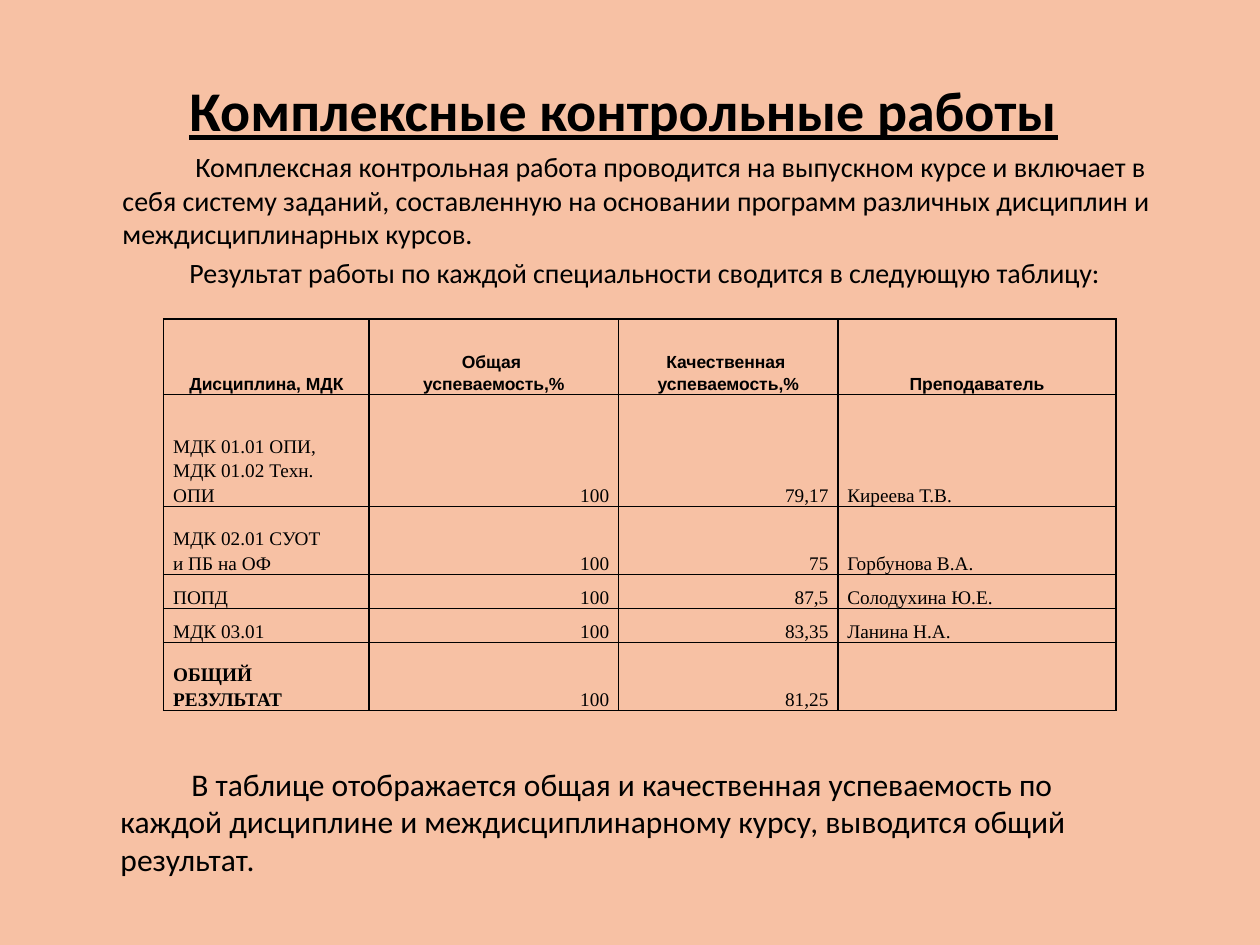
from dataclasses import dataclass

import lxml.etree
import pptx
import pptx.dml.color
import pptx.enum.text
import pptx.oxml.ns
import pptx.util
from pptx.util import Cm, Pt

BLACK = pptx.dml.color.RGBColor(0x00, 0x00, 0x00)
PEACH = pptx.dml.color.RGBColor(0xF7, 0xC1, 0xA4)
ALIGN = pptx.enum.text.PP_ALIGN
ANCHOR = pptx.enum.text.MSO_ANCHOR
COLUMN_WIDTHS = (4.14, 5.03, 4.42, 5.61)
COLUMN_ALIGNS = (ALIGN.LEFT, ALIGN.RIGHT, ALIGN.RIGHT, ALIGN.LEFT)


@dataclass(frozen=True)
class Style:
    font: str
    size: float
    bold: bool = False
    underline: bool = False


@dataclass(frozen=True)
class Passage:
    text: str
    indent: float
    space_before: float = 0


@dataclass(frozen=True)
class TextBlock:
    left: float
    top: float
    width: float
    height: float
    style: Style
    passages: tuple[Passage, ...]


@dataclass(frozen=True)
class ResultRow:
    height: float
    values: tuple[str, str, str, str]
    bold_name: bool = False


TITLE_STYLE = Style("Calibri", 32, bold=True, underline=True)
HEADER_STYLE = Style("Arial", 10, bold=True)
CELL_STYLE = Style("Times New Roman", 11)
NAME_STYLE = Style("Times New Roman", 11, bold=True)

INTRODUCTION = TextBlock(2.22, 2.89, 21.9, 3.1, Style("Calibri", 16), (
    Passage("Комплексная контрольная работа проводится на выпускном курсе и включает в себя "
            "систему заданий, составленную на основании программ различных дисциплин и "
            "междисциплинарных курсов.", 1.47),
    Passage("Результат работы по каждой специальности сводится в следующую таблицу:", 1.35, 3.2),
))
CONCLUSION = TextBlock(2.18, 15.29, 20.83, 2.57, Style("Calibri", 18), (
    Passage("В таблице отображается общая и качественная успеваемость по каждой дисциплине и "
            "междисциплинарному курсу, выводится общий результат.", 1.43),
))
ROWS = (
    ResultRow(1.52, ("Дисциплина, МДК", "Общая \vуспеваемость,%",
                     "Качественная \vуспеваемость,%", "Преподаватель")),
    ResultRow(2.26, ("МДК 01.01 ОПИ,\vМДК 01.02 Техн.\vОПИ", "100", "79,17", "Киреева Т.В.")),
    ResultRow(1.37, ("МДК 02.01 СУОТ\vи ПБ на ОФ", "100", "75", "Горбунова В.А.")),
    ResultRow(0.69, ("ПОПД", "100", "87,5", "Солодухина Ю.Е.")),
    ResultRow(0.69, ("МДК 03.01", "100", "83,35", "Ланина Н.А.")),
    ResultRow(1.37, ("ОБЩИЙ \vРЕЗУЛЬТАТ", "100", "81,25", ""), bold_name=True),
)


def format_runs(paragraph, style: Style) -> None:
    for run in paragraph.runs:
        run.font.name = style.font
        run.font.size = Pt(style.size)
        run.font.bold = style.bold
        run.font.underline = style.underline
        run.font.color.rgb = BLACK


def draw_title(slide, text: str) -> None:
    title = slide.shapes.title
    title.left, title.top, title.width, title.height = Cm(1.27), Cm(1.4), Cm(22.6), Cm(1.6)
    frame = title.text_frame
    frame.text = text
    frame.vertical_anchor = ANCHOR.TOP
    frame.auto_size = pptx.enum.text.MSO_AUTO_SIZE.NONE
    frame.paragraphs[0].alignment = ALIGN.CENTER
    format_runs(frame.paragraphs[0], TITLE_STYLE)


def draw_text(slide, block: TextBlock) -> None:
    shape = slide.shapes.add_textbox(Cm(block.left), Cm(block.top), Cm(block.width), Cm(block.height))
    frame = shape.text_frame
    frame.word_wrap = True
    frame.text = "\n".join(passage.text for passage in block.passages)
    for paragraph, passage in zip(frame.paragraphs, block.passages):
        paragraph.space_before = Pt(passage.space_before)
        paragraph._p.get_or_add_pPr().set("indent", str(Cm(passage.indent)))
        format_runs(paragraph, block.style)


def add_borders(cell) -> None:
    properties = cell._tc.get_or_add_tcPr()
    qualified = pptx.oxml.ns.qn
    for side in ("a:lnL", "a:lnR", "a:lnT", "a:lnB"):
        line = lxml.etree.SubElement(properties, qualified(side), w=str(Pt(1)))
        fill = lxml.etree.SubElement(line, qualified("a:solidFill"))
        lxml.etree.SubElement(fill, qualified("a:srgbClr"), val=str(BLACK))


def fill_cell(cell, text: str, style: Style, alignment: ALIGN) -> None:
    add_borders(cell)
    cell.fill.background()
    cell.vertical_anchor = ANCHOR.BOTTOM
    cell.margin_left = cell.margin_right = Cm(0.19)
    cell.margin_top = cell.margin_bottom = Cm(0)
    cell.text_frame.text = text
    paragraph = cell.text_frame.paragraphs[0]
    paragraph.alignment = alignment
    paragraph.line_spacing = 1.15
    format_runs(paragraph, style)


def draw_results(slide, rows: tuple[ResultRow, ...]) -> None:
    height = sum(row.height for row in rows)
    table = slide.shapes.add_table(len(rows), len(COLUMN_WIDTHS), Cm(3.3), Cm(6.43),
                                   Cm(sum(COLUMN_WIDTHS)), Cm(height)).table
    table.first_row = False
    table.horz_banding = False
    for column, width in zip(table.columns, COLUMN_WIDTHS):
        column.width = Cm(width)
    for row_index, row in enumerate(rows):
        table.rows[row_index].height = Cm(row.height)
        for column_index, text in enumerate(row.values):
            style, alignment = CELL_STYLE, COLUMN_ALIGNS[column_index]
            if row_index == 0:
                style, alignment = HEADER_STYLE, ALIGN.CENTER
            elif row.bold_name and column_index == 0:
                style = NAME_STYLE
            fill_cell(table.cell(row_index, column_index), text, style, alignment)


def main() -> None:
    presentation = pptx.Presentation()
    presentation.slide_width, presentation.slide_height = Cm(25.4), Cm(19.05)
    slide = presentation.slides.add_slide(presentation.slide_layouts[5])
    slide.background.fill.solid()
    slide.background.fill.fore_color.rgb = PEACH
    draw_title(slide, "Комплексные контрольные работы")
    draw_text(slide, INTRODUCTION)
    draw_text(slide, CONCLUSION)
    draw_results(slide, ROWS)
    presentation.save("out.pptx")


if __name__ == "__main__":
    main()
